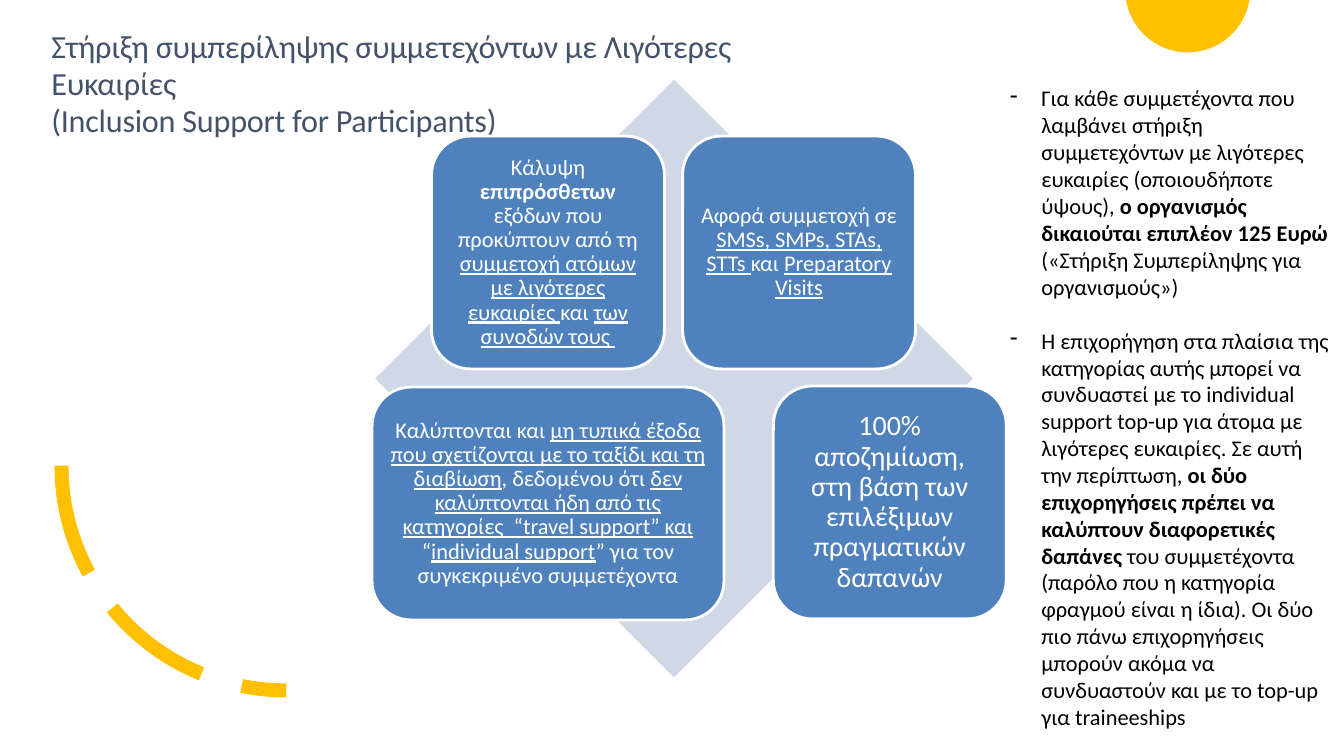
from math import cos, pi, sin

from lxml import etree
from pptx import Presentation
from pptx.dml.color import RGBColor
from pptx.enum.dml import MSO_LINE
from pptx.enum.shapes import MSO_SHAPE
from pptx.enum.text import MSO_ANCHOR, PP_ALIGN
from pptx.oxml.ns import qn
from pptx.util import Inches, Pt

DIAMOND = MSO_SHAPE.DIAMOND
ROUND = MSO_SHAPE.ROUNDED_RECTANGLE
DASH = MSO_LINE.LONG_DASH
MIDDLE = MSO_ANCHOR.MIDDLE
CENTER = PP_ALIGN.CENTER

COLORS = {name: RGBColor.from_string(code) for name, code in {
    "gold": "FFC000", "slate": "44536A", "pale": "D0D8E8",
    "blue": "4F81BD", "white": "FFFFFF", "black": "000000",
}.items()}

prs = Presentation()
prs.slide_width = Inches(13.33)
prs.slide_height = Inches(7.5)
slide = prs.slides.add_slide(prs.slide_layouts[6])
shapes = slide.shapes


def add_arc(mid_x, mid_y, radius, start, end, close):
    """Draw a circular arc; angles run clockwise from the right, in radians."""
    steps = 40
    angles = [start + (end - start) * i / steps for i in range(steps + 1)]
    points = [(Inches(mid_x + radius * cos(a)), Inches(mid_y + radius * sin(a)))
              for a in angles]
    pen = shapes.build_freeform(*points[0])
    pen.add_line_segments(points[1:], close=close)
    arc = pen.convert_to_shape()
    arc.shadow.inherit = False
    return arc


def add_run(par, text, size, color, style=""):
    """Add a run; style may be "b" for bold or "u" for underlined."""
    run = par.add_run()
    run.text = text
    font = run.font
    font.name = "Calibri"
    font.size = Pt(size)
    font.color.rgb = COLORS[color]
    font.bold = style == "b"
    font.underline = style == "u"
    return run


# Gold disc cut by the top edge
disc = add_arc(11.78, -0.1, 0.62, 0.16, pi - 0.16, True)
disc.fill.solid()
disc.fill.fore_color.rgb = COLORS["gold"]
disc.line.fill.background()

# Title
title = shapes.add_textbox(Inches(0.51), Inches(0.27), Inches(8.04), Inches(0.74))
frame = title.text_frame
frame.word_wrap = True
frame.margin_left = frame.margin_right = frame.margin_bottom = 0
frame.margin_top = Inches(0.01)
TITLE = [
    "Στήριξη συμπερίληψης συμμετεχόντων με Λιγότερες Ευκαιρίες",
    "(Inclusion Support for Participants)",
]
for i, line in enumerate(TITLE):
    par = frame.add_paragraph() if i else frame.paragraphs[0]
    par.line_spacing = Pt(26.4)
    run = add_run(par, line, 23, "slate")
    run.font._element.set("spc", "-20")

# Dashed quarter circle
curve = add_arc(2.84, 4.62, 2.23, pi, pi / 2, False)
curve.fill.background()
curve.line.color.rgb = COLORS["gold"]
curve.line.width = Pt(10)
curve.line.dash_style = DASH

# Diamond with four cards
diamond = shapes.add_shape(DIAMOND, Inches(3.72), Inches(0.79), Inches(5.93), Inches(5.93))
diamond.shadow.inherit = False
diamond.fill.solid()
diamond.fill.fore_color.rgb = COLORS["pale"]
diamond.line.fill.background()

SIDE = 2.31
CARDS = [
    (4.28, 1.35, SIDE, 16, [
        ("Κάλυψη ", ""), ("επιπρόσθετων", "b"),
        (" εξόδων που προκύπτουν από τη ", ""),
        ("συμμετοχή ατόμων με λιγότερες ευκαιρίες ", "u"),
        ("και ", ""), ("των συνοδών τους ", "u")]),
    (6.77, 1.35, SIDE, 16, [
        ("Αφορά συμμετοχή σε ", ""), ("SMSs, SMPs, STAs, STTs ", "u"),
        ("και ", ""), ("Preparatory Visits", "u")]),
    (3.69, 3.84, 3.49, 16, [
        ("Καλύπτονται και ", ""),
        ("μη τυπικά έξοδα που σχετίζονται με το ταξίδι και τη διαβίωση", "u"),
        (", δεδομένου ότι ", ""),
        ("δεν καλύπτονται ήδη από τις κατηγορίες  “travel support” και ", "u"),
        ("“", ""), ("individual support", "u"),
        ("” για τον συγκεκριμένο συμμετέχοντα", "")]),
    (7.67, 3.83, SIDE, 20, [
        ("100% αποζημίωση, στη βάση των επιλέξιμων πραγματικών δαπανών", "")]),
]
for left, top, width, size, runs in CARDS:
    card = shapes.add_shape(ROUND, Inches(left), Inches(top), Inches(width), Inches(SIDE))
    card.shadow.inherit = False
    card.fill.solid()
    card.fill.fore_color.rgb = COLORS["blue"]
    card.line.color.rgb = COLORS["white"]
    card.line.width = Pt(2)
    frame = card.text_frame
    frame.word_wrap = True
    frame.vertical_anchor = MIDDLE
    frame.margin_left = frame.margin_right = Inches(0.07)
    frame.margin_top = frame.margin_bottom = Inches(0.07)
    par = frame.paragraphs[0]
    par.alignment = CENTER
    par.line_spacing = 0.9
    for text, style in runs:
        add_run(par, text, size, "white", style)

# Notes on the right
NOTES = [
    [("Για κάθε συμμετέχοντα που λαμβάνει στήριξη συμμετεχόντων με λιγότερες "
      "ευκαιρίες (οποιουδήποτε ύψους), ", ""),
     ("ο οργανισμός δικαιούται επιπλέον 125 Ευρώ ", "b"),
     ("(«Στήριξη Συμπερίληψης για οργανισμούς»)", "")],
    [("Η επιχορήγηση στα πλαίσια της κατηγορίας αυτής μπορεί να συνδυαστεί με το "
      "individual support top-up για άτομα με λιγότερες ευκαιρίες. Σε αυτή την "
      "περίπτωση, ", ""),
     ("οι δύο επιχορηγήσεις πρέπει να καλύπτουν διαφορετικές δαπάνες ", "b"),
     ("του συμμετέχοντα (παρόλο που η κατηγορία φραγμού είναι η ίδια). Οι δύο πιο "
      "πάνω επιχορηγήσεις μπορούν ακόμα να συνδυαστούν και με το top-up για "
      "traineeships", "")],
]
box = shapes.add_textbox(Inches(9.92), Inches(0.79), Inches(3.42), Inches(7.44))
frame = box.text_frame
frame.word_wrap = True
for i, runs in enumerate(NOTES):
    par = frame.add_paragraph() if i else frame.paragraphs[0]
    if i:
        par.space_before = Pt(19.5)
    props = par._p.get_or_add_pPr()
    props.set("marL", str(Inches(0.31)))
    props.set("indent", str(-Inches(0.31)))
    etree.SubElement(props, qn("a:buChar")).set("char", "-")
    for text, style in runs:
        add_run(par, text, 16, "black", style)

prs.save("out.pptx")
